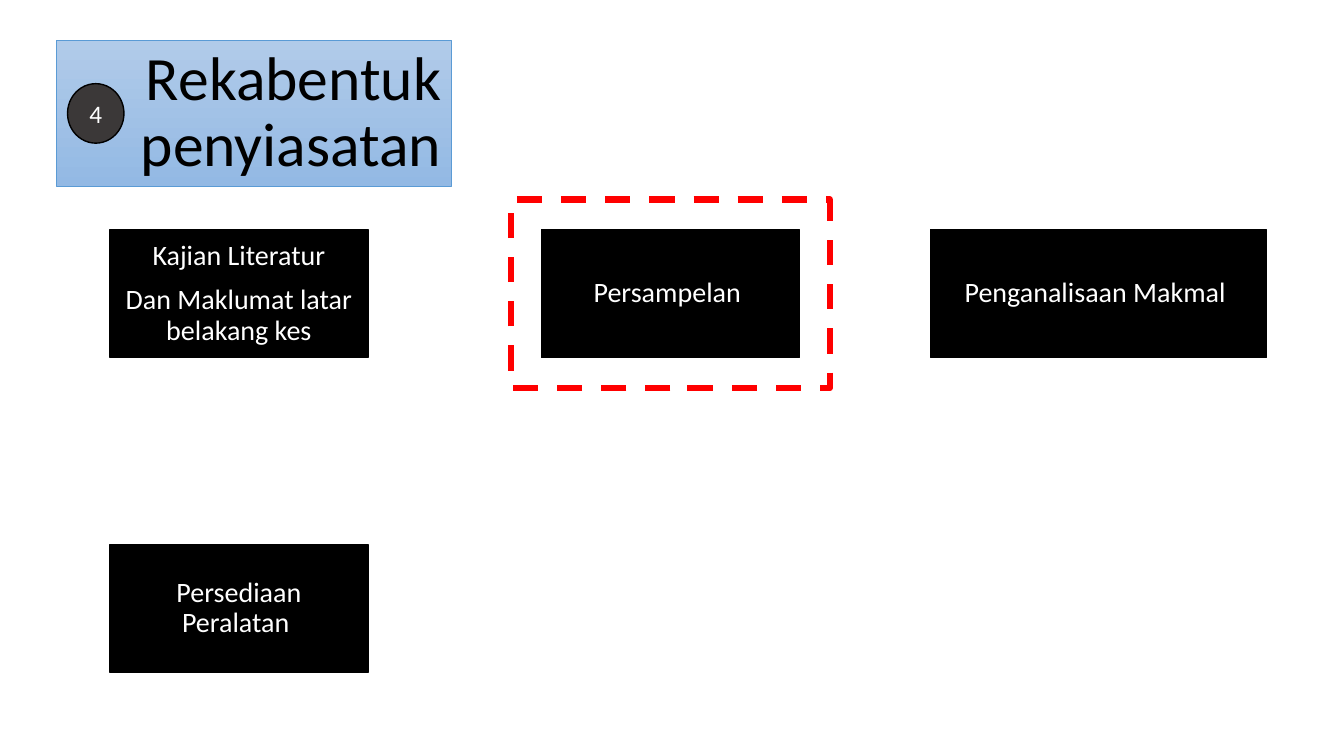
"""Build the survey design slide with its step boxes and highlighted stage."""
from dataclasses import dataclass

from pptx import Presentation
from pptx.dml.color import RGBColor
from pptx.enum.dml import MSO_LINE
from pptx.enum.shapes import MSO_SHAPE
from pptx.enum.text import MSO_ANCHOR, MSO_AUTO_SIZE, PP_ALIGN
from pptx.util import Pt

RECTANGLE, OVAL = MSO_SHAPE.RECTANGLE, MSO_SHAPE.OVAL
DASH = MSO_LINE.DASH
MIDDLE = MSO_ANCHOR.MIDDLE
NO_AUTOFIT = MSO_AUTO_SIZE.NONE
CENTER, RIGHT = PP_ALIGN.CENTER, PP_ALIGN.RIGHT

EMU_PER_PX = 9144
SLIDE_SIZE = (1333, 750)
TITLE_ONLY_LAYOUT = 5


@dataclass(frozen=True)
class Theme:
    """Hold the colours, type sizes and font of the slide."""

    font: str = "Calibri"
    black: str = "000000"
    white: str = "FFFFFF"
    badge: str = "3B3838"
    highlight: str = "FF0000"
    title_line: str = "5B9BD5"
    title_gradient: tuple = ("B1CBE9", "93B9E4")
    title_size: int = 44
    step_size: int = 20
    badge_size: int = 18


THEME = Theme()
BOX_WIDTH, BOX_HEIGHT = 256, 127
LEFT_COLUMN, MIDDLE_COLUMN, RIGHT_COLUMN = 109, 537, 923
TOP_ROW, BOTTOM_ROW = 228, 540
HIGHLIGHT_MARGIN = 30

STEPS = [
    (LEFT_COLUMN, TOP_ROW, BOX_WIDTH,
     ["Kajian Literatur", "Dan Maklumat latar belakang kes"]),
    (MIDDLE_COLUMN, TOP_ROW, BOX_WIDTH, ["Persampelan "]),
    (RIGHT_COLUMN, TOP_ROW, 333, ["Penganalisaan Makmal "]),
    (LEFT_COLUMN, BOTTOM_ROW, BOX_WIDTH, ["Persediaan Peralatan "]),
]


def px(length):
    """Turn a length in px into EMU."""
    return length * EMU_PER_PX


def apply_format(target, values):
    """Set each named value on the target."""
    for name, value in values.items():
        setattr(target, name, value)


def place(shape, left, top, width, height):
    """Move and size a shape in px."""
    apply_format(shape, {"left": px(left), "top": px(top),
                         "width": px(width), "height": px(height)})


def set_line(shape, color, width):
    """Give a shape a solid outline."""
    shape.line.color.rgb = RGBColor.from_string(color)
    shape.line.width = Pt(width)


def write_text(shape, lines, size, color, alignment=CENTER, spacing=0.9):
    """Write one paragraph per line, centred vertically in the shape."""
    frame = shape.text_frame
    frame.text = "\n".join(lines)
    apply_format(frame, {"word_wrap": True, "auto_size": NO_AUTOFIT,
                         "vertical_anchor": MIDDLE})
    for index, paragraph in enumerate(frame.paragraphs):
        apply_format(paragraph, {"alignment": alignment, "line_spacing": spacing,
                                 "space_before": Pt(10 if index else 0)})
        apply_format(paragraph.font, {"name": THEME.font, "size": Pt(size)})
        paragraph.font.color.rgb = RGBColor.from_string(color)


def add_outlined_shape(slide, kind, box, fill, line, line_width):
    """Add a preset shape with an outline and an optional fill."""
    shape = slide.shapes.add_shape(kind, *map(px, box))
    shape.shadow.inherit = False
    if fill:
        shape.fill.solid()
        shape.fill.fore_color.rgb = RGBColor.from_string(fill)
    else:
        shape.fill.background()
    set_line(shape, line, line_width)
    return shape


def format_title(slide, text):
    """Place the title and give it a vertical gradient."""
    title = slide.shapes.title
    place(title, 56, 40, 392, 145)
    title.fill.gradient()
    title.fill.gradient_angle = 270
    for stop, color in zip(title.fill.gradient_stops, THEME.title_gradient):
        stop.color.rgb = RGBColor.from_string(color)
    set_line(title, THEME.title_line, 0.5)
    write_text(title, [text], THEME.title_size, THEME.black, RIGHT)


def add_step(slide, left, top, width, lines):
    """Add a black box that names one step."""
    step = add_outlined_shape(slide, RECTANGLE, (left, top, width, BOX_HEIGHT),
                              THEME.black, THEME.black, 1)
    write_text(step, lines, THEME.step_size, THEME.white)


def add_badge(slide, number):
    """Add the round number badge on the title."""
    badge = add_outlined_shape(slide, OVAL, (67, 83, 56, 59),
                               THEME.badge, THEME.black, 1)
    write_text(badge, [number], THEME.badge_size, THEME.white, spacing=1.0)


def add_highlight(slide, left, top):
    """Add a dashed frame around the step box at the given place."""
    box = (left - HIGHLIGHT_MARGIN, top - HIGHLIGHT_MARGIN,
           BOX_WIDTH + 2 * HIGHLIGHT_MARGIN, BOX_HEIGHT + 2 * HIGHLIGHT_MARGIN)
    frame = add_outlined_shape(slide, RECTANGLE, box, None, THEME.highlight, 4.5)
    frame.line.dash_style = DASH


def main():
    """Build and save the presentation."""
    presentation = Presentation()
    presentation.slide_width, presentation.slide_height = map(px, SLIDE_SIZE)
    layout = presentation.slide_layouts[TITLE_ONLY_LAYOUT]
    slide = presentation.slides.add_slide(layout)
    format_title(slide, "Rekabentuk penyiasatan")
    for step in STEPS:
        add_step(slide, *step)
    add_badge(slide, "4")
    add_highlight(slide, MIDDLE_COLUMN, TOP_ROW)
    presentation.save("out.pptx")


if __name__ == "__main__":
    main()
